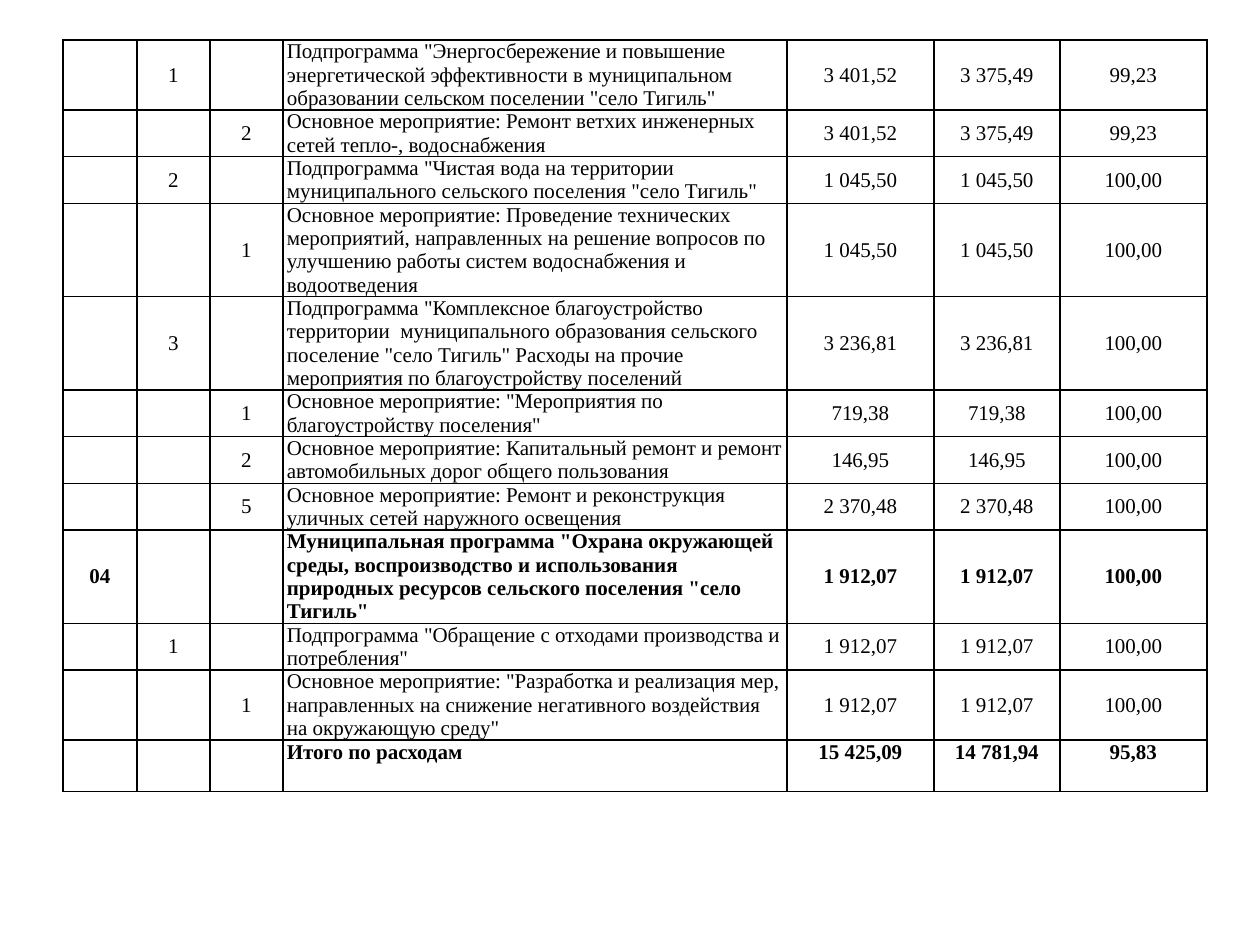
from lxml.etree import SubElement
from pptx import Presentation
from pptx.dml.color import RGBColor
from pptx.enum.text import MSO_ANCHOR, PP_ALIGN
from pptx.oxml.ns import qn
from pptx.util import Emu, Pt

SCALE = 914400 / 126
COLORS = {"ink": "000000"}
FONT = "Times New Roman"
SIZE = 12
WIDTHS = [74, 73, 73, 504, 147, 126, 147]
LINE = 70 / 3

# level, code, lines of text, title, plan, fact, percent
ROWS = [
    (1, "1", 3, 'Подпрограмма "Энергосбережение и повышение энергетической эффективности в муниципальном образовании сельском поселении "село Тигиль"', "3 401,52", "3 375,49", "99,23"),
    (2, "2", 2, "Основное мероприятие: Ремонт ветхих инженерных сетей тепло-, водоснабжения", "3 401,52", "3 375,49", "99,23"),
    (1, "2", 2, 'Подпрограмма "Чистая вода на территории муниципального сельского поселения "село Тигиль"', "1 045,50", "1 045,50", "100,00"),
    (2, "1", 4, "Основное мероприятие: Проведение технических мероприятий, направленных на решение вопросов по улучшению работы систем водоснабжения и водоотведения", "1 045,50", "1 045,50", "100,00"),
    (1, "3", 4, 'Подпрограмма "Комплексное благоустройство территории  муниципального образования сельского поселение "село Тигиль" Расходы на прочие мероприятия по благоустройству поселений', "3 236,81", "3 236,81", "100,00"),
    (2, "1", 2, 'Основное мероприятие: "Мероприятия по благоустройству поселения"', "719,38", "719,38", "100,00"),
    (2, "2", 2, "Основное мероприятие: Капитальный ремонт и ремонт автомобильных дорог общего пользования", "146,95", "146,95", "100,00"),
    (2, "5", 2, "Основное мероприятие: Ремонт и реконструкция уличных сетей наружного освещения", "2 370,48", "2 370,48", "100,00"),
    (0, "04", 4, 'Муниципальная программа "Охрана окружающей среды, воспроизводство и использования природных ресурсов сельского поселения "село Тигиль"', "1 912,07", "1 912,07", "100,00"),
    (1, "1", 2, 'Подпрограмма "Обращение с отходами производства и потребления"', "1 912,07", "1 912,07", "100,00"),
    (2, "1", 3, 'Основное мероприятие: "Разработка и реализация мер, направленных на снижение негативного воздействия на окружающую среду"', "1 912,07", "1 912,07", "100,00"),
    (0, "", 1, "Итого по расходам", "15 425,09", "14 781,94", "95,83"),
    (0, "", 1, "", "", "", ""),
]


def px(n):
    return Emu(round(n * SCALE))


def write(cell, text, bold=False, align=PP_ALIGN.CENTER):
    cell.margin_left = cell.margin_right = px(4)
    cell.margin_top = cell.margin_bottom = 0
    cell.vertical_anchor = MSO_ANCHOR.MIDDLE
    para = cell.text_frame.paragraphs[0]
    para.alignment = align
    if not text:
        SubElement(para._p, qn("a:endParaRPr"), sz=str(SIZE * 100))
        return
    run = para.add_run()
    run.text = text
    font = run.font
    font.name, font.size, font.bold = FONT, Pt(SIZE), bold
    font.color.rgb = RGBColor.from_string(COLORS["ink"])


def edge(cell, sides):
    props = cell._tc.get_or_add_tcPr()
    for side in "LRTB":
        line = SubElement(props, qn(f"a:ln{side}"), w=str(Pt(1)))
        if side in sides:
            fill = SubElement(line, qn("a:solidFill"))
            SubElement(fill, qn("a:srgbClr"), val=COLORS["ink"])
        else:
            SubElement(line, qn("a:noFill"))
    cell.fill.background()


def budget(slide):
    high = LINE * sum(row[2] for row in ROWS)
    frame = slide.shapes.add_table(
        len(ROWS), len(WIDTHS), px(63), px(40), px(sum(WIDTHS)), px(high))
    table = frame.table
    table.first_row = table.horz_banding = False
    for col, wide in zip(table.columns, WIDTHS):
        col.width = px(wide)
    last = len(ROWS) - 1
    for i, (level, code, lines, *rest) in enumerate(ROWS):
        table.rows[i].height = px(lines * LINE)
        codes = [code if n == level else "" for n in range(3)]
        sides = {last - 1: "LRT", last: "LRB"}.get(i, "LRTB")
        for j, text in enumerate(codes + rest):
            cell = table.cell(i, j)
            align = PP_ALIGN.LEFT if j == 3 else PP_ALIGN.CENTER
            write(cell, text, bold=level == 0, align=align)
            edge(cell, sides)


def main():
    deck = Presentation()
    deck.slide_width, deck.slide_height = px(1260), px(945)
    budget(deck.slides.add_slide(deck.slide_layouts[6]))
    deck.save("out.pptx")


if __name__ == "__main__":
    main()
